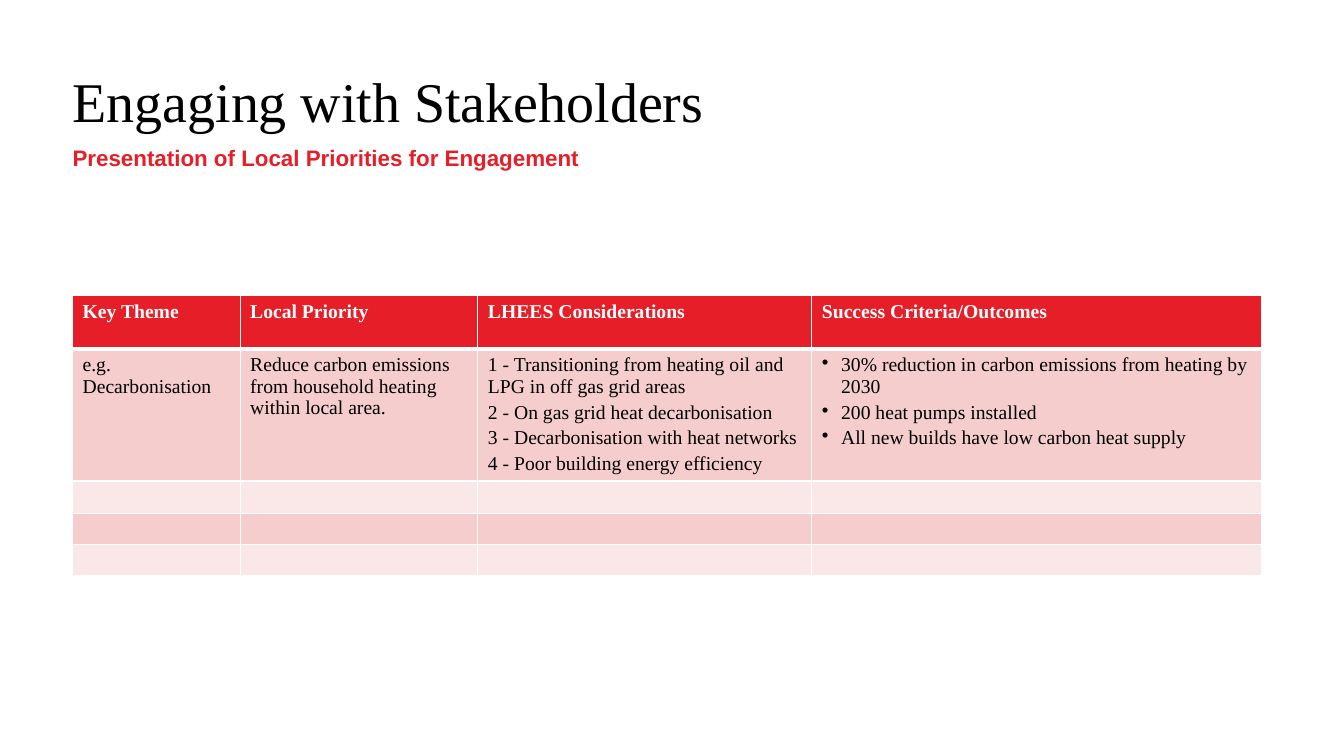
from dataclasses import dataclass

from lxml import etree
from pptx import Presentation
from pptx import util as u
from pptx.dml.color import RGBColor
from pptx.enum import text
from pptx.oxml import ns

WIDTH, HEIGHT = 13.33, 7.5
MARGIN = 0.054 * WIDTH
CONTENT_WIDTH = 11.79


@dataclass(frozen=True)
class Theme:
    serif: str = "Times New Roman"
    sans: str = "Arial"
    ink: str = "000000"
    white: str = "FFFFFF"
    red: str = "E61E28"
    pink: str = "F5CDCD"
    pale: str = "FAE8E8"
    title_size: int = 40
    subtitle_size: int = 16
    table_size: int = 14


THEME = Theme()

COLUMN_SHARES = (0.141, 0.2, 0.281, 0.378)
ROW_HEIGHTS = (0.53, 1.31, 0.32, 0.31, 0.31)
HEADERS = ("Key Theme", "Local Priority", "LHEES Considerations",
           "Success Criteria/Outcomes")
EXAMPLE = (
    ["e.g. Decarbonisation"],
    ["Reduce carbon emissions from household heating within local area."],
    ["1 - Transitioning from heating oil and LPG in off gas grid areas",
     "2 - On gas grid heat decarbonisation",
     "3 - Decarbonisation with heat networks",
     "4 - Poor building energy efficiency"],
    ["30% reduction in carbon emissions from heating by 2030",
     "200 heat pumps installed",
     "All new builds have low carbon heat supply"],
)


def add_bullet(p, indent=0.19):
    pPr = p._p.get_or_add_pPr()
    pPr.set("marL", str(u.Inches(indent)))
    pPr.set("indent", str(-u.Inches(indent)))
    etree.SubElement(pPr, ns.qn("a:buChar"), char="•")


def write(tf, lines, *, font, size, color, bold=False, after=0,
          line_spacing=None, bulleted=False):
    """Fill a text frame with one formatted paragraph per line."""
    for i, line in enumerate(lines):
        p = tf.paragraphs[0] if i == 0 else tf.add_paragraph()
        if bulleted:
            add_bullet(p)
        p.alignment = text.PP_ALIGN.LEFT
        p.space_before = u.Pt(0)
        p.space_after = u.Pt(after)
        if line_spacing:
            p.line_spacing = u.Pt(line_spacing)
        r = p.add_run()
        r.text = line
        r.font.name = font
        r.font.size = u.Pt(size)
        r.font.bold = bold
        r.font.color.rgb = RGBColor.from_string(color)


def place_heading(sp, top, width, height, line, **style):
    """Move a placeholder to the left margin and write its line."""
    sp.left, sp.top = u.Inches(MARGIN), u.Inches(top)
    sp.width, sp.height = u.Inches(width), u.Inches(height)
    tf = sp.text_frame
    tf.margin_left = tf.margin_right = tf.margin_top = tf.margin_bottom = 0
    tf.word_wrap = True
    tf.auto_size = text.MSO_AUTO_SIZE.NONE
    tf.vertical_anchor = text.MSO_ANCHOR.TOP
    write(tf, [line], **style)


def format_cell(cell, fill, top=1, bottom=1):
    """Give a cell white borders (widths in points) and a solid fill."""
    tcPr = cell._tc.get_or_add_tcPr()
    for side, width in (("L", 1), ("R", 1), ("T", top), ("B", bottom)):
        ln = etree.SubElement(tcPr, ns.qn(f"a:ln{side}"), w=str(u.Pt(width)))
        solid = etree.SubElement(ln, ns.qn("a:solidFill"))
        etree.SubElement(solid, ns.qn("a:srgbClr"), val=THEME.white)
    cell.fill.solid()
    cell.fill.fore_color.rgb = RGBColor.from_string(fill)


def add_priorities_table(slide, top):
    frame = slide.shapes.add_table(
        len(ROW_HEIGHTS), len(COLUMN_SHARES), u.Inches(MARGIN), u.Inches(top),
        u.Inches(CONTENT_WIDTH), u.Inches(sum(ROW_HEIGHTS)))
    table = frame.table
    for column, share in zip(table.columns, COLUMN_SHARES):
        column.width = u.Inches(share * CONTENT_WIDTH)
    for row, height in zip(table.rows, ROW_HEIGHTS):
        row.height = u.Inches(height)

    # Header row
    for cell, header in zip(table.rows[0].cells, HEADERS):
        format_cell(cell, THEME.red, bottom=3)
        write(cell.text_frame, [header], font=THEME.serif,
              size=THEME.table_size, color=THEME.white, bold=True)

    # Worked example, with bullets in the outcomes column
    for i, lines in enumerate(EXAMPLE):
        cell = table.cell(1, i)
        format_cell(cell, THEME.pink, top=3)
        write(cell.text_frame, lines, font=THEME.serif, size=THEME.table_size,
              color=THEME.ink, after=3, bulleted=i == len(EXAMPLE) - 1)

    # Empty banded rows to fill in
    for i in range(2, len(ROW_HEIGHTS)):
        for cell in table.rows[i].cells:
            cell.margin_top = cell.margin_bottom = 0
            format_cell(cell, THEME.pink if i % 2 else THEME.pale)


def main():
    prs = Presentation()
    prs.slide_width, prs.slide_height = u.Inches(WIDTH), u.Inches(HEIGHT)
    slide = prs.slides.add_slide(prs.slide_layouts[0])

    # Title and subtitle
    place_heading(slide.shapes.title, 0.096 * HEIGHT, 0.74 * WIDTH, 0.58,
                  "Engaging with Stakeholders", font=THEME.serif,
                  size=THEME.title_size, color=THEME.ink, line_spacing=44)
    place_heading(slide.placeholders[1], 0.191 * HEIGHT, 0.44 * WIDTH, 0.27,
                  "Presentation of Local Priorities for Engagement",
                  font=THEME.sans, size=THEME.subtitle_size, color=THEME.red,
                  bold=True, after=9)

    # Table of priorities
    add_priorities_table(slide, 0.391 * HEIGHT)
    prs.save("out.pptx")


if __name__ == "__main__":
    main()
